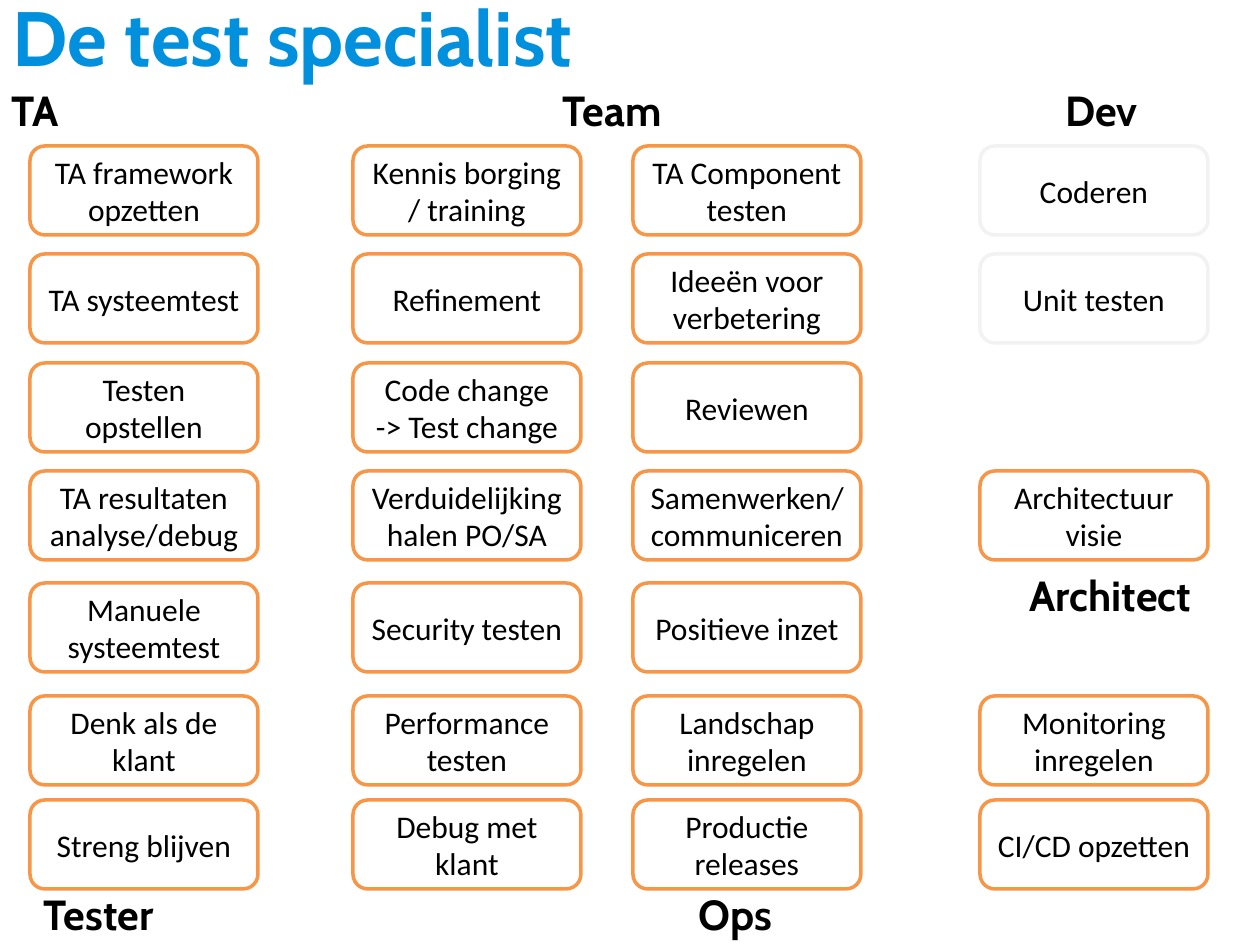
from dataclasses import dataclass

from lxml.etree import SubElement
from pptx import Presentation
from pptx.dml.color import RGBColor
from pptx.enum.shapes import MSO_SHAPE
from pptx.enum.text import MSO_ANCHOR, MSO_AUTO_SIZE, PP_ALIGN
from pptx.oxml.ns import qn
from pptx.util import Emu, Pt

EMU_PER_PX = 914400 / 126
ORANGE, GREY, WHITE, BLACK, BLUE = "F79646", "F2F2F2", "FFFFFF", "000000", "0090DE"
ROW_TOPS = [146, 254, 363, 471, 583, 696, 800]
CARD_WIDTH, CARD_HEIGHT = 228, 89
HEADING_HEIGHT = 69
TOP_HEADINGS, BOTTOM_HEADINGS = 75, 879


@dataclass
class Column:
    left: int
    tasks: list[str]  # one per row, empty where the row has no card
    grey_rows: tuple[int, ...] = ()


@dataclass
class Heading:
    label: str
    left: int
    top: int
    width: int


COLUMNS = [
    Column(30, ["TA framework opzetten", "TA systeemtest", "Testen opstellen",
                "TA resultaten analyse/debug", "Manuele systeemtest",
                "Denk als de klant", "Streng blijven"]),
    Column(353, ["Kennis borging / training", "Refinement",
                 "Code change\n-> Test change", "Verduidelijking halen PO/SA",
                 "Security testen", "Performance testen", "Debug met klant"]),
    Column(633, ["TA Component testen", "Ideeën voor verbetering", "Reviewen",
                 "Samenwerken/communiceren", "Positieve inzet",
                 "Landschap inregelen", "Productie releases"]),
    Column(980, ["Coderen", "Unit testen", "", "Architectuur visie", "",
                 "Monitoring inregelen", "CI/CD opzetten"], grey_rows=(0, 1)),
]
BODY_HEADING = Heading("TA", -1, TOP_HEADINGS, 160)
OTHER_HEADINGS = [
    Heading("Team", 550, TOP_HEADINGS, 160),
    Heading("Dev", 1053, TOP_HEADINGS, 160),
    Heading("Tester", 31, BOTTOM_HEADINGS, 160),
    Heading("Ops", 686, BOTTOM_HEADINGS, 160),
    Heading("Architect", 1017, 560, 231),
]


def px(length: int) -> Emu:
    return Emu(round(length * EMU_PER_PX))


def color(hex_value: str) -> RGBColor:
    return RGBColor.from_string(hex_value)


def place(shape, left: int, top: int, width: int, height: int) -> None:
    shape.left, shape.top = px(left), px(top)
    shape.width, shape.height = px(width), px(height)


def prepare_frame(shape):
    """Centre the text vertically, wrap it and return its first paragraph."""
    frame = shape.text_frame
    frame.word_wrap = True
    frame.auto_size = MSO_AUTO_SIZE.NONE
    frame.vertical_anchor = MSO_ANCHOR.MIDDLE
    return frame.paragraphs[0]


def add_run(paragraph, text: str, font: str, size: int, hex_value: str, bold=False) -> None:
    run = paragraph.add_run()
    run.text = text
    run.font.name, run.font.size, run.font.bold = font, Pt(size), bold
    run.font.color.rgb = color(hex_value)


def fill_heading(shape, heading: Heading) -> None:
    place(shape, heading.left, heading.top, heading.width, HEADING_HEIGHT)
    paragraph = prepare_frame(shape)
    paragraph.alignment = PP_ALIGN.LEFT
    paragraph.space_before = Pt(0)
    properties = paragraph._p.get_or_add_pPr()
    properties.set("marL", "0")
    properties.set("indent", "0")
    SubElement(properties, qn("a:buNone"))
    add_run(paragraph, heading.label, "Cabin", 24, BLACK, bold=True)


def add_card(slide, left: int, top: int, task: str, outline: str) -> None:
    card = slide.shapes.add_shape(MSO_SHAPE.ROUNDED_RECTANGLE, px(left), px(top),
                                  px(CARD_WIDTH), px(CARD_HEIGHT))
    card.shadow.inherit = False
    card.fill.solid()
    card.fill.fore_color.rgb = color(WHITE)
    card.line.color.rgb = color(outline)
    card.line.width = Pt(2)
    paragraph = prepare_frame(card)
    paragraph.alignment = PP_ALIGN.CENTER
    for index, line in enumerate(task.split("\n")):
        if index:
            paragraph.add_line_break()
        add_run(paragraph, line, "Calibri", 18, BLACK)


def main() -> None:
    presentation = Presentation()
    presentation.slide_width, presentation.slide_height = px(1260), px(945)
    slide = presentation.slides.add_slide(presentation.slide_layouts[1])

    title = slide.shapes.title
    place(title, 0, -43, 1096, 158)
    title_paragraph = prepare_frame(title)
    title_paragraph.alignment = PP_ALIGN.LEFT
    add_run(title_paragraph, "De test specialist", "Cabin", 44, BLUE, bold=True)

    for column in COLUMNS:
        for row, (top, task) in enumerate(zip(ROW_TOPS, column.tasks)):
            if task:
                outline = GREY if row in column.grey_rows else ORANGE
                add_card(slide, column.left, top, task, outline)

    fill_heading(slide.placeholders[1], BODY_HEADING)
    for heading in OTHER_HEADINGS:
        fill_heading(slide.shapes.add_textbox(0, 0, 0, 0), heading)

    presentation.save("out.pptx")


if __name__ == "__main__":
    main()
